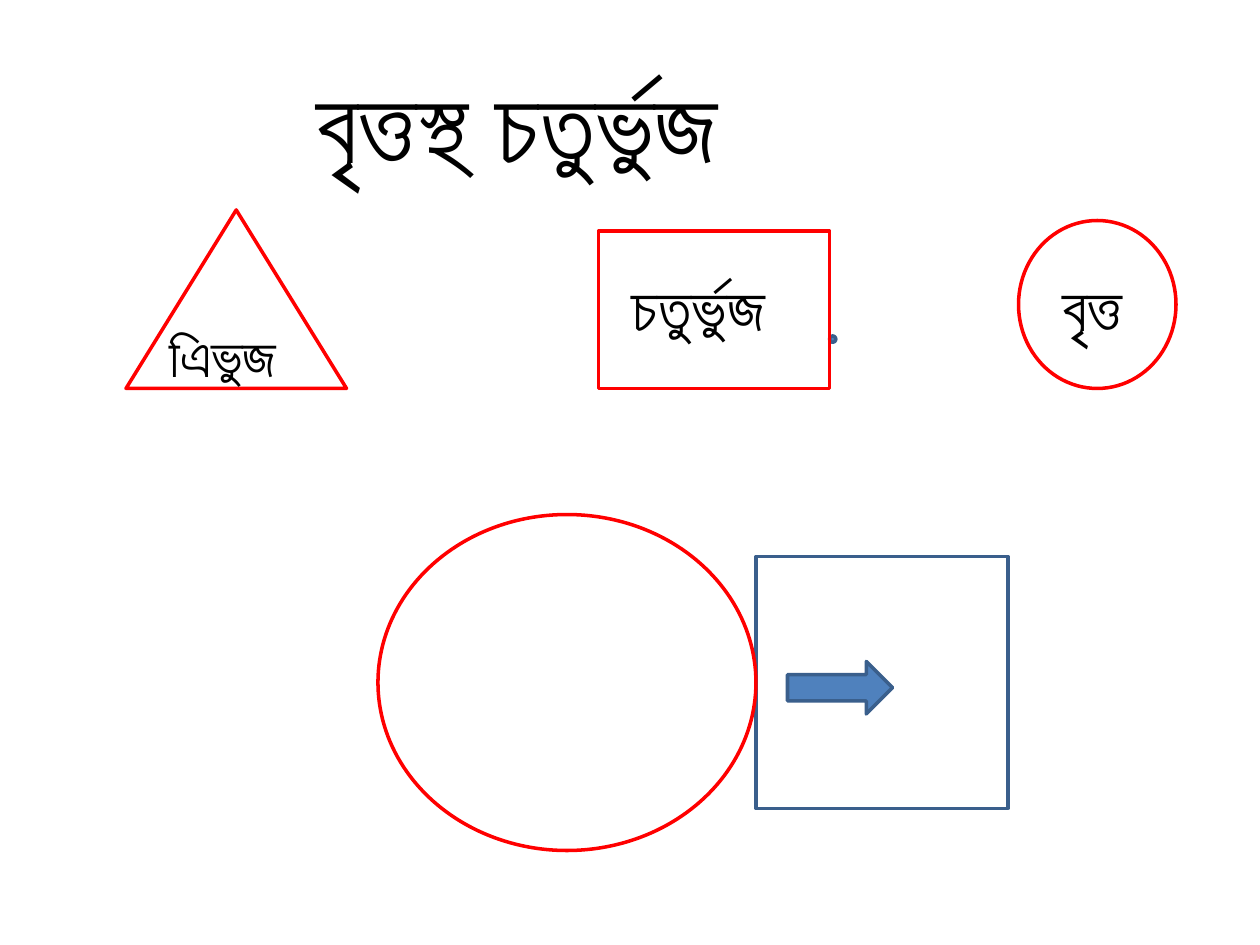
from dataclasses import dataclass
from typing import Optional

from pptx import Presentation
from pptx.dml.color import RGBColor
from pptx.enum.shapes import MSO_SHAPE as Shape
from pptx.enum.text import MSO_AUTO_SIZE as AutoSize
from pptx.util import Pt


@dataclass(frozen=True)
class Theme:
    font: str = "Calibri"
    text: RGBColor = RGBColor(0, 0, 0)
    red: RGBColor = RGBColor(0xFF, 0, 0)
    blue: RGBColor = RGBColor(0x4F, 0x81, 0xBD)
    dark_blue: RGBColor = RGBColor(0x3A, 0x5F, 0x8C)
    line_width: float = 2
    title_size: float = 60
    label_size: float = 36
    small_label_size: float = 32


@dataclass(frozen=True)
class Box:
    """Position and size in points."""
    left: float
    top: float
    width: float
    height: float

    def lengths(self) -> tuple:
        return Pt(self.left), Pt(self.top), Pt(self.width), Pt(self.height)


@dataclass(frozen=True)
class Figure:
    kind: Shape
    box: Box
    line: RGBColor
    fill: Optional[RGBColor] = None


@dataclass(frozen=True)
class Label:
    text: str
    box: Box
    size: float


THEME = Theme()

FIGURES = [
    Figure(Shape.OVAL, Box(474, 192, 3.6, 3.6), THEME.dark_blue, THEME.blue),
    Figure(Shape.ISOSCELES_TRIANGLE, Box(72, 120, 126, 102), THEME.red),
    Figure(Shape.RECTANGLE, Box(342, 132, 132, 90), THEME.red),
    Figure(Shape.OVAL, Box(582, 126, 90, 96), THEME.red),
    Figure(Shape.RECTANGLE, Box(432, 318, 144, 144), THEME.dark_blue),
    Figure(Shape.OVAL, Box(216, 294, 216, 192), THEME.red),
    Figure(Shape.RIGHT_ARROW, Box(450, 378, 60, 30), THEME.dark_blue, THEME.blue),
]

LABELS = [
    Label("এিভুজ", Box(90, 180, 126, 46), THEME.small_label_size),
    Label("চতুর্ভুজ", Box(354, 150, 120, 51), THEME.label_size),
    Label("বৃত্ত", Box(600, 150, 72, 51), THEME.label_size),
    Label("বৃত্তস্থ চতুর্ভুজ", Box(174, 30, 282, 80), THEME.title_size),
]


def draw_figure(s, figure: Figure) -> None:
    sp = s.shapes.add_shape(figure.kind, *figure.box.lengths())
    sp.shadow.inherit = False
    sp.line.color.rgb = figure.line
    sp.line.width = Pt(THEME.line_width)
    if figure.fill is None:
        sp.fill.background()
    else:
        sp.fill.solid()
        sp.fill.fore_color.rgb = figure.fill


def draw_label(s, label: Label) -> None:
    tf = s.shapes.add_textbox(*label.box.lengths()).text_frame
    tf.word_wrap = True
    tf.auto_size = AutoSize.SHAPE_TO_FIT_TEXT
    tf.text = label.text
    font = tf.paragraphs[0].runs[0].font
    font.name = THEME.font
    font.size = Pt(label.size)
    font.color.rgb = THEME.text


def main() -> None:
    prs = Presentation()
    prs.slide_width, prs.slide_height = Pt(720), Pt(540)
    s = prs.slides.add_slide(prs.slide_layouts[6])
    for figure in FIGURES:
        draw_figure(s, figure)
    for label in LABELS:
        draw_label(s, label)
    prs.save("out.pptx")


if __name__ == "__main__":
    main()
